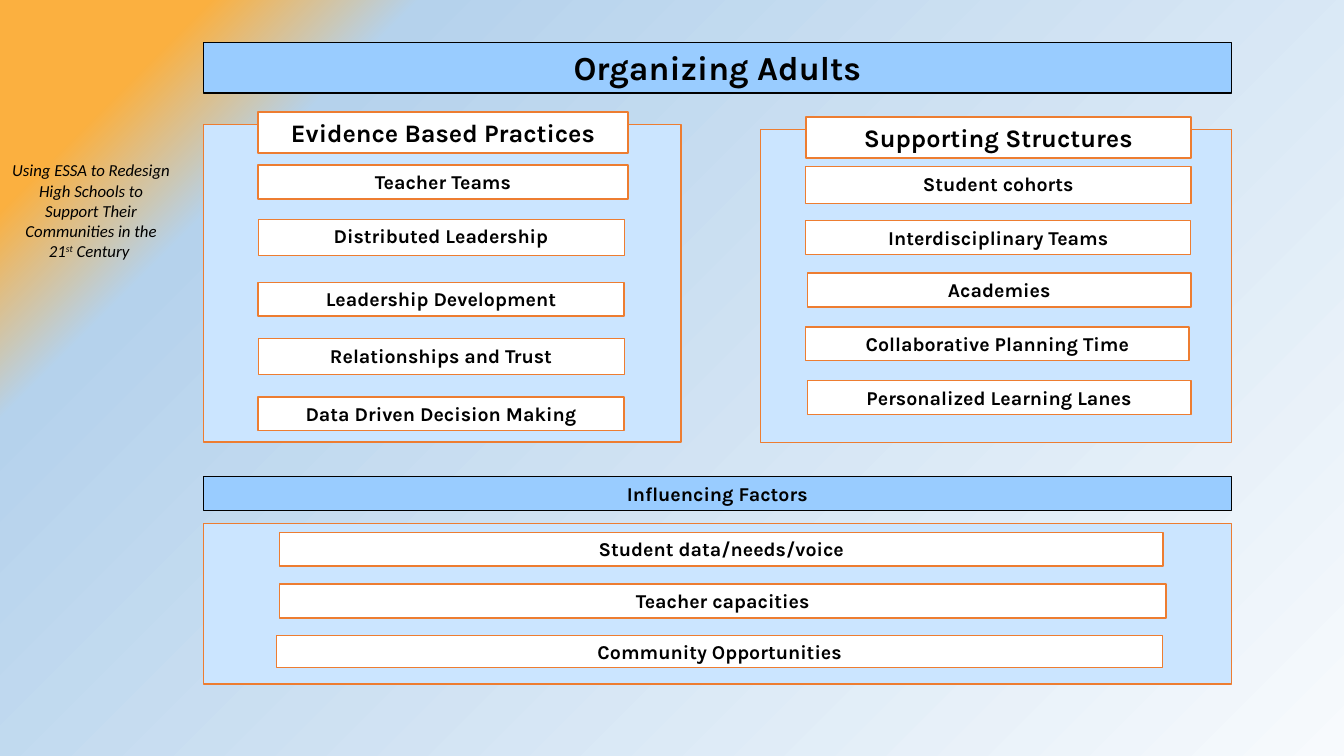
from dataclasses import dataclass

from lxml import etree
from pptx import Presentation
from pptx.dml.color import RGBColor
from pptx.enum.shapes import MSO_SHAPE as Shape
from pptx.enum.text import MSO_ANCHOR as Anchor, MSO_AUTO_SIZE as AutoSize, PP_ALIGN as Align
from pptx.oxml.ns import qn
from pptx.util import Pt

COLORS = {
    "panel": "CBE5FF",
    "banner": "99CCFF",
    "card": "FFFFFF",
    "orange": "ED7D31",
    "black": "000000",
}
# Position in percent, colour, opacity in percent
BACKGROUND = [(0, "F7FAFD", 100), (80, "B5D2EC", 50), (90, "FBB040", 55), (100, "FBB040", 100)]


@dataclass
class Box:
    left: float
    top: float
    width: float
    height: float
    text: str = ""
    size: int = 14
    fill: str = "card"
    line: str = "orange"
    weight: float = 1
    anchor: Anchor = Anchor.TOP


def rgb(name: str) -> RGBColor:
    return RGBColor.from_string(COLORS[name])


def draw_box(slide, box: Box) -> None:
    s = slide.shapes.add_shape(
        Shape.RECTANGLE, Pt(box.left), Pt(box.top), Pt(box.width), Pt(box.height))
    s.shadow.inherit = False
    s.fill.solid()
    s.fill.fore_color.rgb = rgb(box.fill)
    s.line.color.rgb = rgb(box.line)
    s.line.width = Pt(box.weight)
    if not box.text:
        return
    tf = s.text_frame
    tf.word_wrap = True
    tf.vertical_anchor = box.anchor
    tf.text = box.text
    p = tf.paragraphs[0]
    p.alignment = Align.CENTER
    font = p.runs[0].font
    font.name, font.size, font.bold = "Karla", Pt(box.size), True
    font.color.rgb = rgb("black")


def draw_background(slide) -> None:
    fill = slide.background.fill
    fill.gradient()
    grad = slide.background._cSld.find(".//" + qn("a:gradFill"))
    for child in list(grad):
        grad.remove(child)
    stops = etree.SubElement(grad, qn("a:gsLst"))
    for position, color, opacity in BACKGROUND:
        stop = etree.SubElement(stops, qn("a:gs"), pos=str(position * 1000))
        clr = etree.SubElement(stop, qn("a:srgbClr"), val=color)
        if opacity < 100:
            etree.SubElement(clr, qn("a:alpha"), val=str(opacity * 1000))
    center = etree.SubElement(grad, qn("a:path"), path="circle")
    etree.SubElement(center, qn("a:fillToRect"), l="100000", t="100000")


def draw_side_note(slide) -> None:
    s = slide.shapes.add_textbox(Pt(1.4), Pt(110.9), Pt(127.4), Pt(79.9))
    tf = s.text_frame
    tf.word_wrap = True
    tf.auto_size = AutoSize.SHAPE_TO_FIT_TEXT
    p = tf.paragraphs[0]
    p.alignment = Align.CENTER
    for text in ("Using ESSA to Redesign High Schools to Support Their Communities in the 21",
                 "st", " Century "):
        r = p.add_run()
        r.text = text
        r.font.name, r.font.size, r.font.italic = "Calibri", Pt(12), True
        r.font.color.rgb = rgb("black")
    p.runs[1]._r.get_or_add_rPr().set("baseline", "30000")


LEFT, FULL = 145.2, 734.5
PRACTICES, STRUCTURES = 184.3, 575.5

PANELS = [
    Box(LEFT, 373.6, FULL, 115, fill="panel", weight=0.75),
    Box(543.5, 92.4, 336.2, 223.7, fill="panel", weight=0.75),
    Box(LEFT, 89, 341.3, 226.8, fill="panel"),
]
BANNERS = [
    Box(LEFT, 30.2, FULL, 36.4, "Organizing Adults", 24, "banner", "black"),
    Box(LEFT, 340.5, FULL, 24.2, "Influencing Factors", 14, "banner", "black"),
]
HEADINGS = [
    Box(PRACTICES, 80, 264.3, 29.1, "Evidence Based Practices", 18, weight=1.5),
    Box(STRUCTURES, 83.5, 275.2, 29.1, "Supporting Structures", 18, weight=1.5),
]
CARDS = [
    # Evidence based practices
    Box(PRACTICES, 118, 264.3, 24.2, "Teacher Teams"),
    Box(PRACTICES, 156.6, 261.5, 25.9, "Distributed Leadership", weight=0.75),
    Box(PRACTICES, 201.6, 261.5, 24.2, "Leadership Development"),
    Box(PRACTICES, 241.9, 261.5, 25.9, "Relationships and Trust", weight=0.75),
    Box(PRACTICES, 283.5, 261.5, 24.2, "Data Driven Decision Making"),
    # Supporting structures
    Box(STRUCTURES, 118.9, 275.2, 26.6, "Student cohorts"),
    Box(STRUCTURES, 157.5, 275.2, 24.2, "Interdisciplinary Teams", weight=0.75),
    Box(576.7, 195.1, 274, 24.2, "Academies"),
    Box(STRUCTURES, 233.5, 274, 24.2, "Collaborative Planning Time"),
    Box(576.7, 272, 274, 24.2, "Personalized Learning Lanes"),
    # Influencing factors
    Box(199.8, 380.2, 631, 24.2, "Student data/needs/voice"),
    Box(199.8, 417.2, 633, 24.2, "Teacher capacities"),
    Box(197.6, 453.8, 633, 23, "Community Opportunities", weight=0.75, anchor=Anchor.MIDDLE),
]


def main() -> None:
    prs = Presentation()
    prs.slide_width, prs.slide_height = Pt(960), Pt(540)
    slide = prs.slides.add_slide(prs.slide_layouts[6])
    draw_background(slide)
    draw_side_note(slide)
    for box in PANELS + BANNERS + HEADINGS + CARDS:
        draw_box(slide, box)
    prs.save("out.pptx")


if __name__ == "__main__":
    main()
